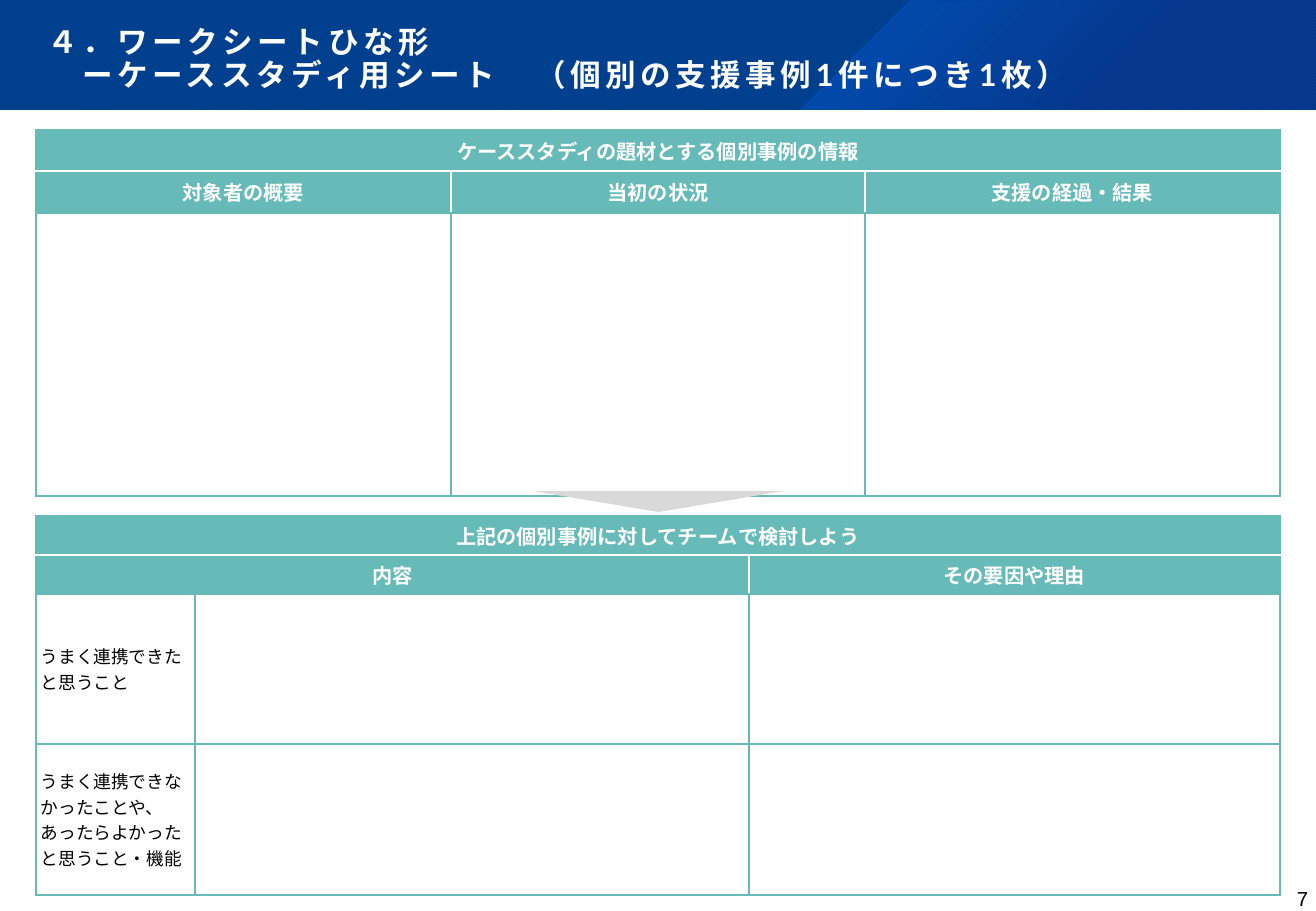
from lxml import etree
from pptx import Presentation
from pptx.dml.color import RGBColor
from pptx.enum.dml import MSO_PATTERN as Pattern
from pptx.enum.shapes import MSO_SHAPE as Shape
from pptx.enum.text import MSO_ANCHOR as Anchor, MSO_AUTO_SIZE as Auto, PP_ALIGN as Align
from pptx.oxml import parse_xml
from pptx.oxml.ns import qn
from pptx.util import Pt

SCALE = 7526  # EMU per px
WIDTH, HEIGHT = 1316, 911
BAND = 110
LEFT = 36
NS = "http://schemas.openxmlformats.org/drawingml/2006/main"

TEAL = RGBColor(0x66, 0xBA, 0xB7)
WHITE = RGBColor(0xFF, 0xFF, 0xFF)
BLACK = RGBColor(0, 0, 0)
GREY = RGBColor(0xD9, 0xD9, 0xD9)
NAVY = RGBColor(0x00, 0x35, 0x79)
BLUE = RGBColor(0x00, 0x42, 0x92)
BRIGHT = RGBColor(0x00, 0x64, 0xDF)
DEEP = RGBColor(0x0C, 0x33, 0x8E)

LATO, NOTO, ARIAL = "Lato", "Noto Sans CJK JP", "Arial"


def px(*nums):
    return [num * SCALE for num in nums]


class Sheet:
    def __init__(self, deck):
        self.slide = deck.slides.add_slide(deck.slide_layouts[5])
        self.shapes = self.slide.shapes

    def style(self, frame, size, color, font, bold=False, align=Align.LEFT):
        for para in frame.paragraphs:
            para.alignment = align
            for run in para.runs:
                run.font.size, run.font.bold = Pt(size), bold
                run.font.color.rgb = color
                run.font.name = font
                east = etree.SubElement(run.font._element, qn("a:ea"))
                east.set("typeface", NOTO)

    def pad(self, frame, left, top, right, bottom):
        frame.margin_left, frame.margin_top, frame.margin_right, frame.margin_bottom = px(
            left, top, right, bottom)

    def plain(self, shape):
        shape.shadow.inherit = False
        shape.line.fill.background()
        return shape

    def shape(self, kind, *box):
        return self.plain(self.shapes.add_shape(kind, *px(*box)))

    def outline(self, points):
        path = self.shapes.build_freeform(*points[0], scale=SCALE)
        path.add_line_segments(points[1:], close=True)
        return self.plain(path.convert_to_shape())

    def glow(self, shape, stops):
        marks = "".join(
            f'<a:gs pos="{pos * 1000}"><a:srgbClr val="{color}">'
            f'<a:alpha val="{alpha * 1000}"/></a:srgbClr></a:gs>'
            for pos, color, alpha in stops)
        fill = parse_xml(
            f'<a:gradFill xmlns:a="{NS}"><a:gsLst>{marks}</a:gsLst><a:path path="circle">'
            '<a:fillToRect r="100000" b="100000"/></a:path></a:gradFill>')
        shape._element.spPr.find(qn("a:custGeom")).addnext(fill)

    def title(self, text, *box):
        title = self.shapes.title
        self.shapes._spTree.append(title._element)  # in front of the band
        title.left, title.top, title.width, title.height = px(*box)
        frame = title.text_frame
        frame.text = text
        frame.word_wrap, frame.auto_size = True, Auto.NONE
        frame.vertical_anchor = Anchor.BOTTOM
        self.pad(frame, 47, 44, 44, 17)
        self.style(frame, 18.1, WHITE, LATO, True)
        para = frame.paragraphs[0]
        para.line_spacing = 0.9
        for run in para.runs:
            run.font._element.set("spc", "270")

    def text(self, text, size, *box):
        frame = self.shapes.add_textbox(*px(*box)).text_frame
        frame.text = text
        frame.word_wrap = True
        self.pad(frame, 0, 0, 0, 0)
        self.style(frame, size, BLACK, ARIAL, align=Align.RIGHT)

    def edges(self, cell, white):
        props = cell._tc.get_or_add_tcPr()
        for spot, side in enumerate("LRTB"):
            color = WHITE if side in white else TEAL
            props.insert(spot, parse_xml(
                f'<a:ln{side} xmlns:a="{NS}" w="19050"><a:solidFill>'
                f'<a:srgbClr val="{color}"/></a:solidFill></a:ln{side}>'))

    def table(self, top, cols, rows, texts, spans, font, inset=None):
        """Two teal header rows over white cells; texts and spans are keyed by (row, column)."""
        table = self.shapes.add_table(
            len(rows), len(cols), *px(LEFT, top, sum(cols), sum(rows))).table
        table.first_row = table.horz_banding = False
        for col, wide in zip(table.columns, cols):
            col.width = wide * SCALE
        for row, high in zip(table.rows, rows):
            row.height = high * SCALE
        for (row, col), end in spans.items():
            table.cell(row, col).merge(table.cell(row, end))
        for row in range(len(rows)):
            for col in range(len(cols)):
                cell = table.cell(row, col)
                if cell.is_spanned:
                    continue
                head = row < 2
                cell.fill.solid()
                cell.fill.fore_color.rgb = TEAL if head else WHITE
                cell.vertical_anchor = Anchor.MIDDLE
                if inset:
                    self.pad(cell, *[inset] * 4)
                cell.text_frame.text = texts.get((row, col), "")
                if head:
                    self.style(cell.text_frame, 12, WHITE, font, True, Align.CENTER)
                else:
                    self.style(cell.text_frame, 10.5, BLACK, font)
                # White rules divide the header cells
                white = "B" if row == 0 else ""
                if row == 1:
                    last = col == len(cols) - 1
                    white = "T" + ("L" if col else "") + ("" if last else "R")
                self.edges(cell, white)


def main():
    deck = Presentation()
    deck.slide_width, deck.slide_height = px(WIDTH, HEIGHT)
    sheet = Sheet(deck)

    # Title band
    band = sheet.shape(Shape.RECTANGLE, 0, 0, WIDTH, BAND)
    band.fill.patterned()
    band.fill.pattern = Pattern.DARK_UPWARD_DIAGONAL
    band.fill.fore_color.rgb, band.fill.back_color.rgb = NAVY, BLUE
    slant = sheet.outline([(910, 1), (WIDTH, 0), (WIDTH, BAND), (800, BAND)])
    sheet.glow(slant, [(0, BRIGHT, 50), (62, DEEP, 55)])
    sheet.title("４．ワークシートひな形\v　ーケーススタディ用シート　（個別の支援事例1件につき1枚）",
                0, 0, WIDTH, BAND)

    # Page number
    sheet.text("7", 12, 1225, 886, 83, 18)

    # Case information
    sheet.table(130, [415, 414, 415], [41, 42, 283], {
        (0, 0): "ケーススタディの題材とする個別事例の情報",
        (1, 0): "対象者の概要",
        (1, 1): "当初の状況",
        (1, 2): "支援の経過・結果",
    }, {(0, 0): 2}, LATO)

    # Team review
    sheet.table(516, [159, 554, 531], [39, 39, 150, 151], {
        (0, 0): "上記の個別事例に対してチームで検討しよう",
        (1, 0): "内容",
        (1, 2): "その要因や理由",
        (2, 0): "うまく連携できたと思うこと",
        (3, 0): "うまく連携できなかったことや、\nあったらよかったと思うこと・機能",
    }, {(0, 0): 2, (1, 0): 1}, NOTO, inset=5)

    # Arrow between the tables
    arrow = sheet.shape(Shape.DOWN_ARROW, 533, 491, 251, 21)
    arrow.adjustments[0] = arrow.adjustments[1] = 1
    arrow.fill.solid()
    arrow.fill.fore_color.rgb = GREY

    deck.save("out.pptx")


if __name__ == "__main__":
    main()
